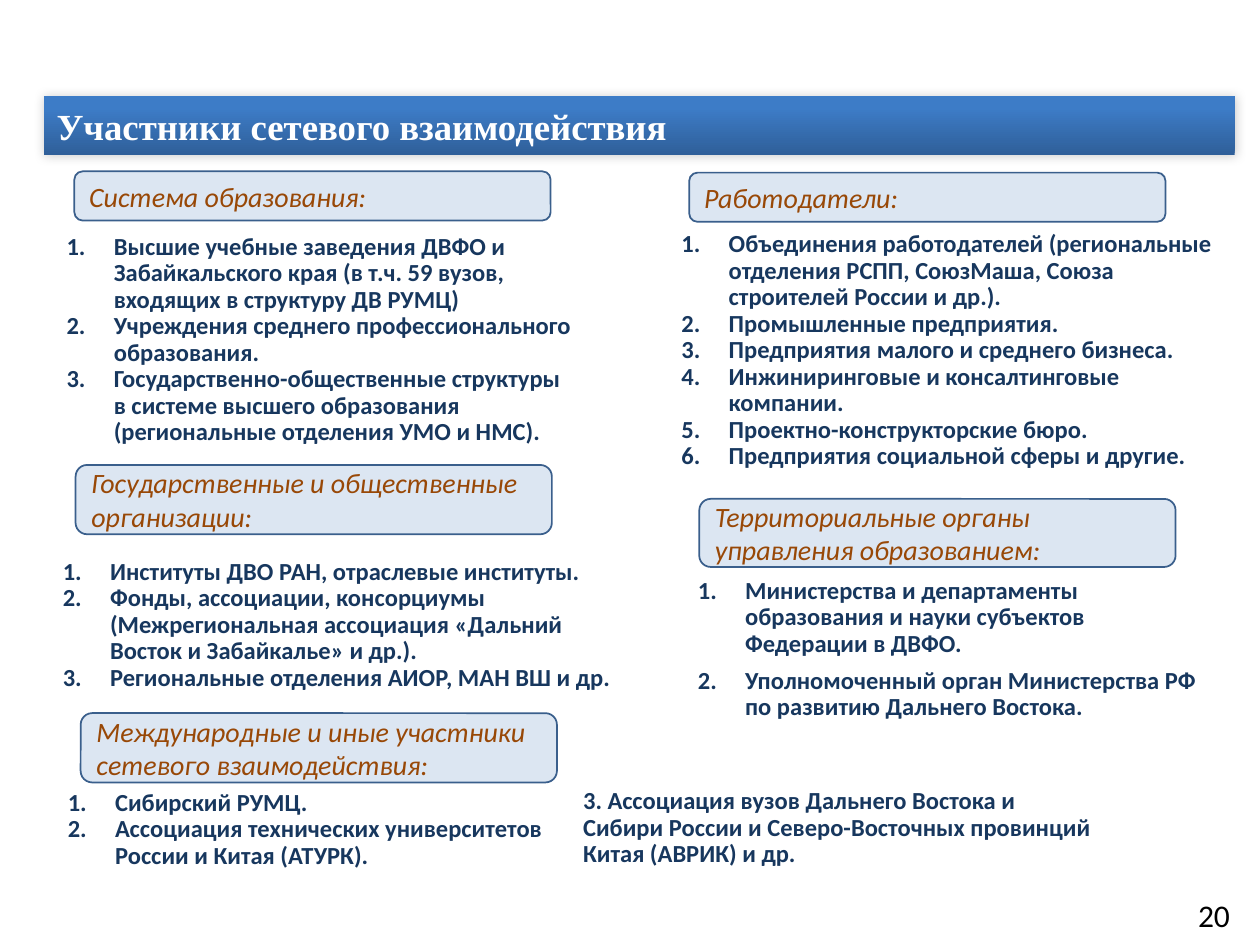
import lxml.etree
import pptx
import pptx.dml.color
import pptx.enum.shapes
import pptx.enum.text
import pptx.oxml.ns
import pptx.util

COLORS = {
    "band_dark": "2F5F99",
    "band_light": "3D7CC7",
    "heading_fill": "DCE6F2",
    "heading_line": "3A5F8C",
    "heading_text": "984807",
    "list_text": "17375E",
    "white": "FFFFFF",
    "black": "000000",
}
WIDTH = pptx.util.Inches(10)
HEIGHT = pptx.util.Inches(7.5)
COLUMN = WIDTH // 100
ROW = HEIGHT // 75
HEADING_COLUMNS = 37.8
INDENT_COLUMNS = 3.75

SECTIONS = [
    {
        "box": (4.3, 13.6, 42.5, 22.5), "heading": "Система образования:",
        "inset": 1.6, "heading_rows": 3.9, "list_offset": 4.5,
        "items": [
            "Высшие учебные заведения ДВФО и Забайкальского края (в т.ч. 59 вузов, входящих в структуру ДВ РУМЦ)",
            "Учреждения среднего профессионального образования.",
            "Государственно-общественные структуры в системе высшего образования (региональные отделения УМО и НМС).",
        ],
    },
    {
        "box": (53.1, 13.7, 44.9, 24.3), "heading": "Работодатели:",
        "inset": 1.6, "heading_rows": 3.9, "list_offset": 4.2,
        "items": [
            "Объединения работодателей (региональные отделения РСПП, СоюзМаша, Союза строителей России и др.).",
            "Промышленные предприятия.",
            "Предприятия малого и среднего бизнеса.",
            "Инжиниринговые и консалтинговые компании.",
            "Проектно-конструкторские бюро.",
            "Предприятия социальной сферы и другие.",
        ],
    },
    {
        "box": (4, 36.9, 46.8, 18.6), "heading": "Государственные и общественные организации:",
        "inset": 2, "heading_rows": 5.5, "list_offset": 7,
        "items": [
            "Институты ДВО РАН, отраслевые институты.",
            "Фонды, ассоциации, консорциумы (Межрегиональная ассоциация «Дальний Восток и Забайкалье» и др.).",
            "Региональные отделения АИОР, МАН ВШ и др.",
        ],
    },
    {
        "box": (54.4, 39.6, 42.5, 18.3), "heading": "Территориальные органы управления образованием:",
        "inset": 1.1, "heading_rows": 5.4, "list_offset": 5.8, "space_after": 6,
        "items": [
            "Министерства и департаменты образования и науки субъектов Федерации в ДВФО.",
            "Уполномоченный орган Министерства РФ по развитию Дальнего Востока.",
        ],
    },
    {
        "box": (4.4, 56.6, 42.4, 13), "heading": "Международные и иные участники сетевого взаимодействия:",
        "inset": 2, "heading_rows": 5.5, "list_offset": 5.6,
        "items": [
            "Сибирский РУМЦ.",
            "Ассоциация технических университетов России и Китая (АТУРК).",
        ],
    },
]


def color(name):
    return pptx.dml.color.RGBColor.from_string(COLORS[name])


def place(box):
    left, top, width, height = box
    return (round(left * COLUMN), round(top * ROW),
            round(width * COLUMN), round(height * ROW))


def style(paragraph, size, color_name, name="Calibri", bold=False, italic=False):
    font = paragraph.font
    font.name = name
    font.size = pptx.util.Pt(size)
    font.bold = bold
    font.italic = italic
    font.color.rgb = color(color_name)


def add_shape(slide, kind, box, text):
    shape = slide.shapes.add_shape(kind, *place(box))
    shape.shadow.inherit = False
    frame = shape.text_frame
    frame.word_wrap = True
    frame.vertical_anchor = pptx.enum.text.MSO_ANCHOR.MIDDLE
    paragraph = frame.paragraphs[0]
    paragraph.text = text
    paragraph.alignment = pptx.enum.text.PP_ALIGN.LEFT
    return shape, paragraph


def add_title(slide, box, text):
    shape, paragraph = add_shape(slide, pptx.enum.shapes.MSO_SHAPE.RECTANGLE, box, text)
    style(paragraph, 21, "white", name="Times New Roman", bold=True)
    shape.line.fill.background()
    shape.fill.gradient()
    shape.fill.gradient_angle = 90
    stops = zip(shape.fill.gradient_stops, ("band_dark", "band_light"), (0, 0.8))
    for stop, name, position in stops:
        stop.color.rgb = color(name)
        stop.position = position
    qn = pptx.oxml.ns.qn
    effects = shape._element.spPr.find(qn("a:effectLst"))
    shadow = lxml.etree.SubElement(effects, qn("a:outerShdw"),
                                   blurRad=str(pptx.util.Pt(6)), dist="0", rotWithShape="0")
    tint = lxml.etree.SubElement(shadow, qn("a:srgbClr"), val=COLORS["black"])
    lxml.etree.SubElement(tint, qn("a:alpha"), val="20000")


def add_heading(slide, box, text):
    shape, paragraph = add_shape(
        slide, pptx.enum.shapes.MSO_SHAPE.ROUNDED_RECTANGLE, box, text)
    style(paragraph, 16, "heading_text", italic=True)
    shape.fill.solid()
    shape.fill.fore_color.rgb = color("heading_fill")
    shape.line.color.rgb = color("heading_line")
    shape.line.width = pptx.util.Pt(1)


def add_list(slide, box, items, numbered=True, space_after=0):
    frame = slide.shapes.add_textbox(*place(box)).text_frame
    frame.word_wrap = True
    for index, item in enumerate(items):
        paragraph = frame.add_paragraph() if index else frame.paragraphs[0]
        paragraph.text = item
        paragraph.line_spacing = 0.9
        paragraph.space_after = pptx.util.Pt(space_after)
        if numbered:
            properties = paragraph._p.get_or_add_pPr()
            indent = round(INDENT_COLUMNS * COLUMN)
            properties.set("marL", str(indent))
            properties.set("indent", str(-indent))
            lxml.etree.SubElement(properties, pptx.oxml.ns.qn("a:buAutoNum"),
                                  type="arabicPeriod")
        style(paragraph, 14, "list_text", bold=True)


def add_section(slide, box, heading, inset, heading_rows, list_offset, items, space_after=0):
    left, top, width, height = box
    add_heading(slide, (left + inset, top, HEADING_COLUMNS, heading_rows), heading)
    add_list(slide, (left, top + list_offset, width, height - list_offset),
             items, space_after=space_after)


def add_page_number(slide, box, text):
    frame = slide.shapes.add_textbox(*place(box)).text_frame
    frame.word_wrap = False
    paragraph = frame.paragraphs[0]
    paragraph.text = text
    style(paragraph, 18, "black")


def main():
    presentation = pptx.Presentation()
    presentation.slide_width = WIDTH
    presentation.slide_height = HEIGHT
    slide = presentation.slides.add_slide(presentation.slide_layouts[6])
    add_title(slide, (3.5, 7.6, 94.5, 4.7), "Участники сетевого взаимодействия")
    for section in SECTIONS:
        add_section(slide, **section)
    add_list(slide, (45.3, 62.1, 42.4, 7.4), [
        "3. Ассоциация вузов Дальнего Востока и Сибири России "
        "и Северо-Восточных провинций Китая (АВРИК) и др.",
    ], numbered=False)
    add_page_number(slide, (94.1, 70.6, 5.1, 4), "20")
    presentation.save("out.pptx")


if __name__ == "__main__":
    main()
